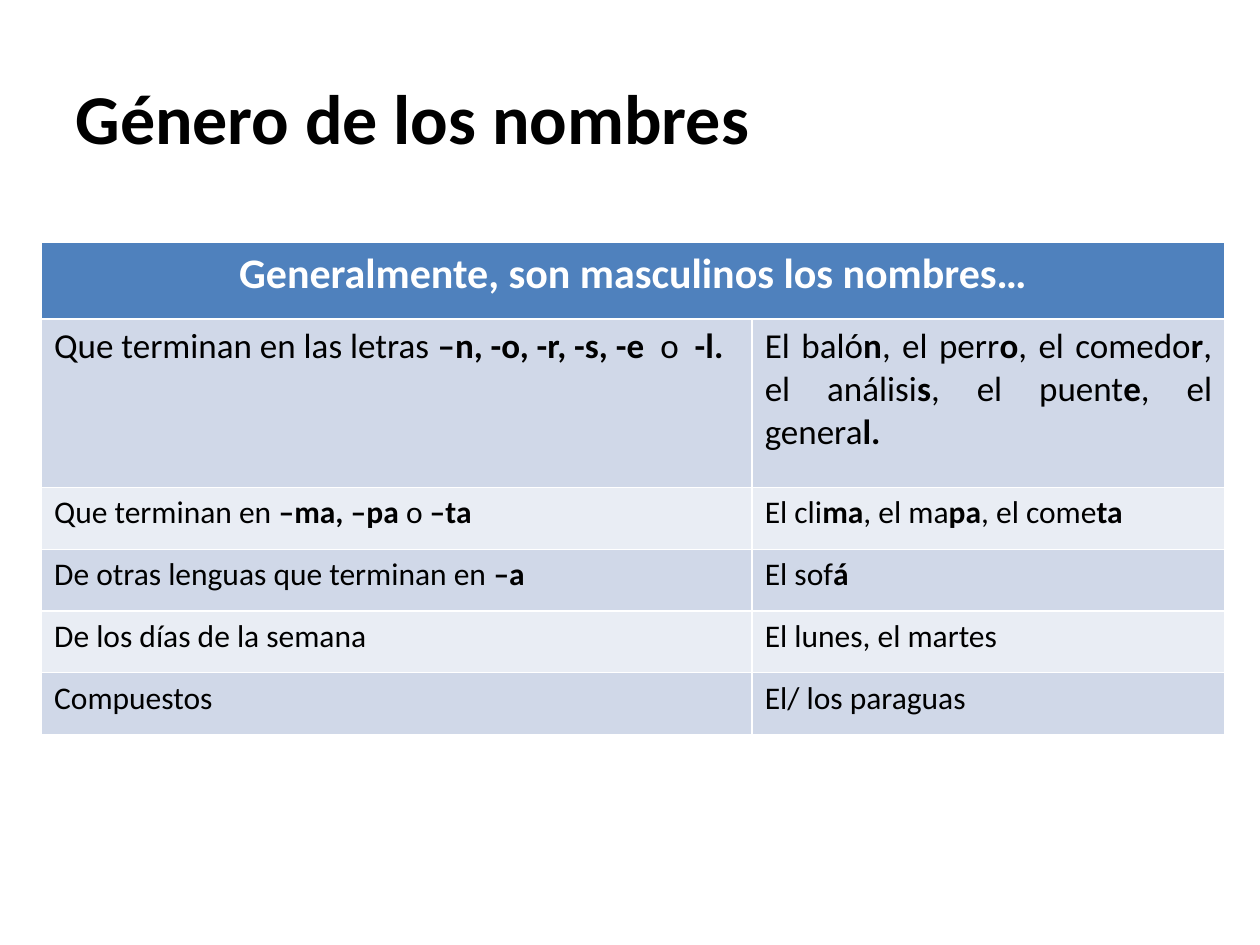
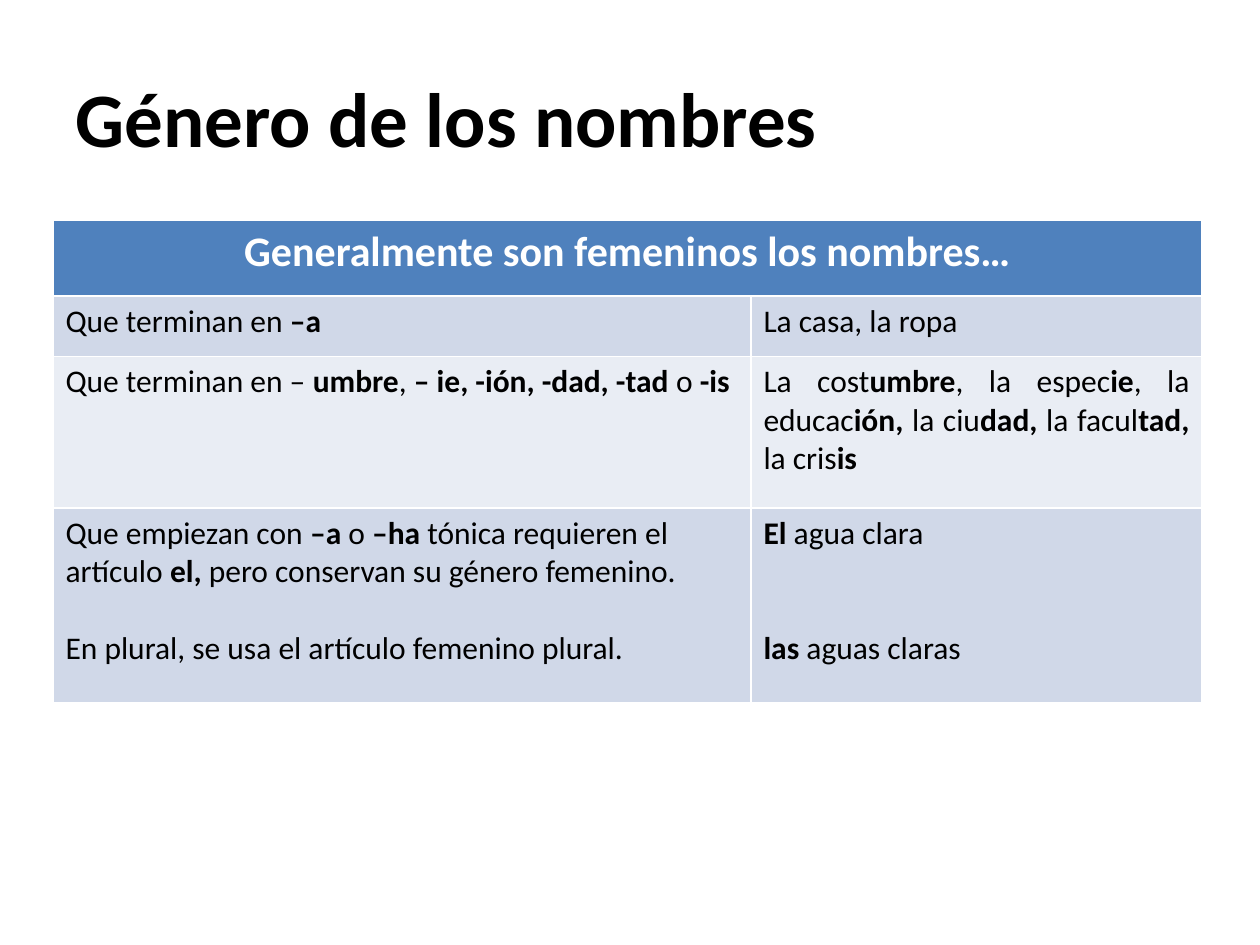
"""Builds two slides with tables on the gender of Spanish nouns."""
from pptx import Presentation
from pptx.dml.color import RGBColor
from pptx.enum.text import MSO_ANCHOR, PP_ALIGN
from pptx.util import Inches, Pt

LEFT, CENTER, JUSTIFY = PP_ALIGN.LEFT, PP_ALIGN.CENTER, PP_ALIGN.JUSTIFY
MIDDLE = MSO_ANCHOR.MIDDLE

BLACK = RGBColor(0x00, 0x00, 0x00)
WHITE = RGBColor(0xFF, 0xFF, 0xFF)
HEADER_BLUE = RGBColor(0x4F, 0x81, 0xBD)
BANDS = (RGBColor(0xD0, 0xD8, 0xE8), RGBColor(0xE9, 0xED, 0xF4))

FONT = "Calibri"
TITLE = "Género de los nombres"
TITLE_ONLY = 5
BOLD_MARK = "*"
LINE_HEIGHT = 22

MASCULINE_ROWS = [
    ("Que terminan en las letras *–n, -o, -r, -s, -e  *o * -l.*",
     "El baló*n*, el perr*o*, el comedo*r*, el análisi*s*, el puent*e*, el genera*l.*"),
    ("Que terminan en *–ma, –pa *o *–ta*", "El cli*ma*, el ma*pa*, el come*ta*"),
    ("De otras lenguas que terminan en *–a*", "El sof*á*"),
    ("De los días de la semana", "El lunes, el martes"),
    ("Compuestos", "El/ los paraguas"),
]
FEMININE_ROWS = [
    ("Que terminan en *–a*", "La casa, la ropa"),
    ("Que terminan en – *umbre*, *– ie, -ión, -dad, -tad *o *-is*",
     "La cost*umbre*, la espec*ie*, la educac*ión, *la ciu*dad, *la facul*tad, *la cris*is*"),
    ("Que empiezan con *–a *o *–ha *tónica requieren el artículo *el, *"
     "pero conservan su género femenino.\n"
     "En plural, se usa el artículo femenino plural.",
     "*El* agua clara\n*las *aguas claras"),
]


def write_text(frame, text, size=18, color=BLACK, align=LEFT, bold=False, gap=0):
    """Write lines of text, turning marked stretches bold and spacing the lines by gap."""
    for index, line in enumerate(text.split("\n")):
        paragraph = frame.add_paragraph() if index else frame.paragraphs[0]
        paragraph.alignment = align
        if index and gap:
            paragraph.space_before = Pt(gap)
        for part, words in enumerate(line.split(BOLD_MARK)):
            if not words:
                continue
            run = paragraph.add_run()
            run.text = words
            run.font.name = FONT
            run.font.size = Pt(size)
            run.font.bold = bold or part % 2 == 1
            run.font.color.rgb = color


def fill_cell(cell, color):
    """Give a cell a solid fill."""
    cell.fill.solid()
    cell.fill.fore_color.rgb = color


def add_titled_slide(presentation, title_size):
    """Add a slide with the shared title and return it."""
    slide = presentation.slides.add_slide(presentation.slide_layouts[TITLE_ONLY])
    title = slide.shapes.title
    title.left, title.top = Inches(0.5), Inches(0.3)
    title.width, title.height = Inches(9), Inches(1.25)
    title.text_frame.vertical_anchor = MIDDLE
    write_text(title.text_frame, TITLE, size=title_size, bold=True)
    return slide


def add_rule_table(slide, header, rows, left, top, widths, heights, formats):
    """Add a table of rules and examples; formats maps (row, column) to text options."""
    table = slide.shapes.add_table(
        len(heights), len(widths), Inches(left), Inches(top),
        Inches(sum(widths)), Inches(sum(heights))).table
    for column, width in zip(table.columns, widths):
        column.width = Inches(width)
    for row, height in zip(table.rows, heights):
        row.height = Inches(height)

    header_cell = table.cell(0, 0)
    header_cell.merge(table.cell(0, len(widths) - 1))
    fill_cell(header_cell, HEADER_BLUE)
    write_text(header_cell.text_frame, header, size=24, color=WHITE, align=CENTER, bold=True)

    for row_index, texts in enumerate(rows):
        for column_index, text in enumerate(texts):
            cell = table.cell(row_index + 1, column_index)
            fill_cell(cell, BANDS[row_index % 2])
            write_text(cell.text_frame, text, **formats.get((row_index, column_index), {}))


def main():
    """Build and save the presentation."""
    presentation = Presentation()
    presentation.slide_width, presentation.slide_height = Inches(10), Inches(7.5)

    masculine = add_titled_slide(presentation, title_size=40)
    add_rule_table(
        masculine, "Generalmente, son masculinos los nombres…", MASCULINE_ROWS,
        left=0.33, top=1.92, widths=[5.64, 3.75], heights=[0.61, 1.34] + [0.49] * 4,
        formats={(0, 0): {"size": 20}, (0, 1): {"size": 20, "align": JUSTIFY}})

    feminine = add_titled_slide(presentation, title_size=44)
    add_rule_table(
        feminine, "Generalmente son femeninos los nombres…", FEMININE_ROWS,
        left=0.42, top=1.75, widths=[5.54, 3.58], heights=[0.6, 0.48, 1.2, 1.55],
        formats={(1, 1): {"align": JUSTIFY}, (2, 0): {"gap": LINE_HEIGHT},
                 (2, 1): {"gap": 2 * LINE_HEIGHT}})

    presentation.save("out.pptx")


if __name__ == "__main__":
    main()
